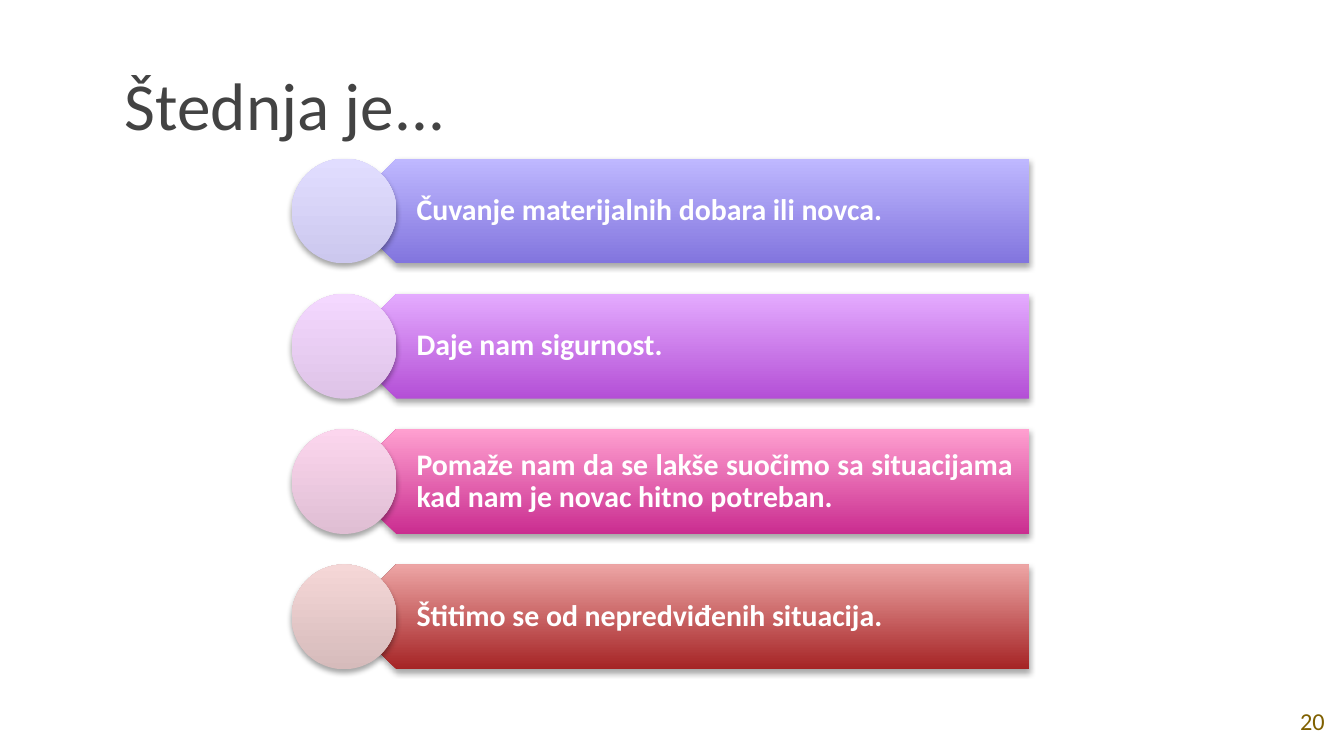
from lxml import etree
from pptx import Presentation
from pptx.dml.color import RGBColor
from pptx.enum.shapes import MSO_SHAPE
from pptx.enum.text import MSO_ANCHOR, PP_ALIGN
from pptx.oxml.ns import qn
from pptx.util import Inches, Pt

PENTAGON, OVAL = MSO_SHAPE.PENTAGON, MSO_SHAPE.OVAL
MIDDLE, BOTTOM = MSO_ANCHOR.MIDDLE, MSO_ANCHOR.BOTTOM
LEFT, CENTER, JUSTIFY = PP_ALIGN.LEFT, PP_ALIGN.CENTER, PP_ALIGN.JUSTIFY
FONT = "Calibri"
BLANK_LAYOUT = 6
SLIDE_WIDTH = 10
SLIDE_HEIGHT = SLIDE_WIDTH * 9 / 16

ITEMS = [
    ("Čuvanje materijalnih dobara ili novca.", ("8275DE", "BFB8FF"), ("CCC8EE", "E1DDFF")),
    ("Daje nam sigurnost.", ("B44FD6", "E4ABFF"), ("DEC3E7", "F4D8FF")),
    ("Pomaže nam da se lakše suočimo sa situacijama kad nam je novac hitno potreban.",
     ("CA2D90", "FFA0D0"), ("DFBED3", "FCD6EE")),
    ("Štitimo se od nepredviđenih situacija.", ("A52425", "EDA5A5"), ("D6BBBB", "F5D7D7")),
]


def color(value):
    """Return the colour for a hex string."""
    return RGBColor.from_string(value)


def add_text(slide, box, text, size, fill, bold=False, align=LEFT, anchor=MIDDLE,
             insets=(0.1, 0.1, 0.1, 0.1), line_spacing=None):
    """Add a text box with one formatted paragraph."""
    shape = slide.shapes.add_textbox(*map(Inches, box))
    frame = shape.text_frame
    frame.word_wrap = True
    frame.vertical_anchor = anchor
    (frame.margin_left, frame.margin_top,
     frame.margin_right, frame.margin_bottom) = map(Inches, insets)
    paragraph = frame.paragraphs[0]
    paragraph.alignment = align
    paragraph.line_spacing = line_spacing
    run = paragraph.add_run()
    run.text = text
    run.font.name = FONT
    run.font.size = Pt(size)
    run.font.bold = bold
    run.font.color.rgb = color(fill)


def add_shadow(shape):
    """Give a shape a soft shadow below it."""
    shape.shadow.inherit = False
    effects = shape._element.spPr.find(qn("a:effectLst"))
    shadow = etree.SubElement(effects, qn("a:outerShdw"), blurRad=str(Pt(3.1)),
                              dist=str(Pt(1.8)), dir="5400000", rotWithShape="0")
    shade = etree.SubElement(shadow, qn("a:srgbClr"), val="000000")
    etree.SubElement(shade, qn("a:alpha"), val="35000")


def add_gradient_shape(slide, kind, box, colors, rotation=0):
    """Add a shadowed shape that runs from its first colour at the bottom to its second."""
    shape = slide.shapes.add_shape(kind, *map(Inches, box))
    shape.rotation = rotation
    shape.line.fill.background()
    shape.fill.gradient()
    shape.fill.gradient_angle = 90
    for stop, value in zip(shape.fill.gradient_stops, colors):
        stop.color.rgb = color(value)
    shape._element.spPr.find(qn("a:gradFill")).set("rotWithShape", "0")
    add_shadow(shape)


def add_item(slide, box, text, bar_colors, circle_colors):
    """Add one list row: a bar with its text and a circle over the bar's tip."""
    left, top, width, height = box
    bar_left, text_left = left + height / 2, left + 0.59
    right = left + width
    add_gradient_shape(slide, PENTAGON, (bar_left, top, right - bar_left, height),
                       bar_colors, rotation=180)
    add_text(slide, (text_left, top, right - text_left, height), text, 16, "FFFFFF",
             bold=True, align=JUSTIFY, insets=(0.34, 0.07, 0.12, 0.07), line_spacing=0.9)
    add_gradient_shape(slide, OVAL, (left, top, height, height), circle_colors)


def add_list(slide, box, items, row_height):
    """Spread the rows evenly over the box."""
    left, top, width, height = box
    step = (height - row_height) / (len(items) - 1)
    for index, item in enumerate(items):
        add_item(slide, (left, top + index * step, width, row_height), *item)


def main():
    """Build and save the slide."""
    presentation = Presentation()
    presentation.slide_width = Inches(SLIDE_WIDTH)
    presentation.slide_height = Inches(SLIDE_HEIGHT)
    slide = presentation.slides.add_slide(presentation.slide_layouts[BLANK_LAYOUT])
    add_text(slide, (0.83, 0.23, 6.15, 0.94), "Štednja je...", 36, "434343", anchor=BOTTOM)
    add_text(slide, (9.53, 5.11, 0.47, 0.51), "20", 13, "7F6000", align=CENTER)
    add_list(slide, (2.17, 1.18, 5.49, 3.8), ITEMS, row_height=0.78)
    presentation.save("out.pptx")


if __name__ == "__main__":
    main()
